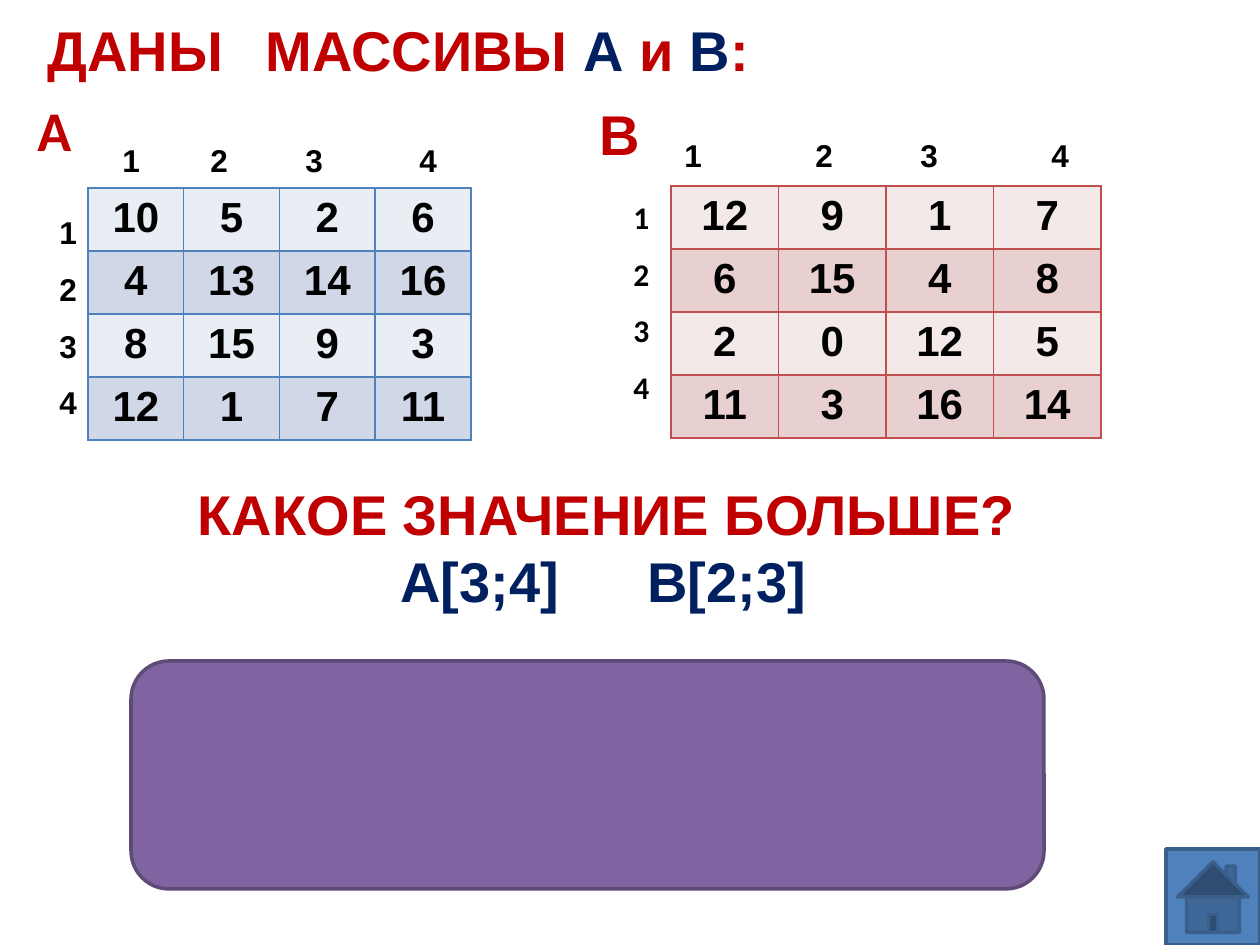
"""Build the slide that compares elements of two 4 by 4 arrays."""
from typing import NamedTuple

from lxml import etree
from pptx import Presentation, util as u
from pptx.dml.color import RGBColor
from pptx.enum import shapes, text
from pptx.oxml.ns import qn

PX = 914400 / 126
BLACK = RGBColor(0, 0, 0)
RED = RGBColor(0xC0, 0, 0)
NAVY = RGBColor(0, 0x20, 0x60)
BLUE = RGBColor(0x4F, 0x81, 0xBD)
DARK_BLUE = RGBColor(0x3A, 0x5F, 0x8C)
BLUE_BANDS = (RGBColor(0xE9, 0xED, 0xF4), RGBColor(0xD0, 0xD8, 0xE8))
BRICK = RGBColor(0xC0, 0x50, 0x4D)
BRICK_BANDS = (RGBColor(0xF4, 0xE9, 0xE9), RGBColor(0xE8, 0xD0, 0xD0))
PURPLE = RGBColor(0x80, 0x64, 0xA2)
DARK_PURPLE = RGBColor(0x5F, 0x4A, 0x78)
CENTER = text.PP_ALIGN.CENTER
LEFT = text.PP_ALIGN.LEFT


class Box(NamedTuple):
    x: int
    y: int
    w: int
    h: int


class Span(NamedTuple):
    text: str
    color: RGBColor = BLACK


class Line(NamedTuple):
    spans: tuple
    align: text.PP_ALIGN = LEFT
    tabs: tuple = ()


class Label(NamedTuple):
    box: Box
    lines: tuple
    size: int = 32
    font: str = "Arial"
    spacing: float = 1.0
    margin_right: int = 12


class Matrix(NamedTuple):
    box: Box
    rows: tuple
    border: RGBColor
    bands: tuple


class Button(NamedTuple):
    kind: shapes.MSO_SHAPE
    box: Box
    fill: RGBColor
    line: RGBColor


MATRICES = (
    Matrix(Box(88, 188, 383, 252),
           ((10, 5, 2, 6), (4, 13, 14, 16), (8, 15, 9, 3), (12, 1, 7, 11)), BLUE, BLUE_BANDS),
    Matrix(Box(671, 186, 430, 252),
           ((12, 9, 1, 7), (6, 15, 4, 8), (2, 0, 12, 5), (11, 3, 16, 14)), BRICK, BRICK_BANDS),
)
ROW_NUMBERS = tuple(Line((Span(n),)) for n in "1234")
LABELS = (
    Label(Box(35, 9, 824, 81),
          (Line((Span("ДАНЫ\tМАССИВЫ ", RED), Span("А", NAVY), Span(" и ", RED),
                 Span("В", NAVY), Span(":", RED)), tabs=(218,)),)),
    Label(Box(25, 89, 69, 81), (Line((Span("А", RED),)),), font="Calibri"),
    Label(Box(621, 173, 30, 236), ROW_NUMBERS, 18, "Calibri", 1.5, 0),
    Label(Box(672, 130, 427, 50),
          (Line((Span("1\t2\t3\t4"),), tabs=(131, 236, 367)),), 18),
    Label(Box(84, 135, 387, 50),
          (Line((Span("\t1\t2\t3\t4"),), tabs=(26, 114, 209, 323)),), 18),
    Label(Box(47, 188, 30, 234), ROW_NUMBERS, 18, spacing=1.5, margin_right=0),
    Label(Box(587, 93, 48, 81), (Line((Span("В", RED),)),), margin_right=0),
    Label(Box(66, 473, 1081, 149),
          (Line((Span("КАКОЕ ЗНАЧЕНИЕ БОЛЬШЕ?", RED),), CENTER),
           Line((Span("\tА[3;4]\tB[2;3]", NAVY),), tabs=(322, 569)))),
)
BUTTONS = (
    Button(shapes.MSO_SHAPE.ROUNDED_RECTANGLE, Box(131, 661, 913, 228), PURPLE, DARK_PURPLE),
    Button(shapes.MSO_SHAPE.ACTION_BUTTON_HOME, Box(1166, 849, 94, 96), BLUE, DARK_BLUE),
)


def px(value: float) -> u.Emu:
    """Turn pixels into EMU."""
    return u.Emu(round(value * PX))


def place(box: Box) -> tuple:
    """Return the box in EMU."""
    return tuple(px(v) for v in box)


def style(r, size: int, font: str, color: RGBColor) -> None:
    """Format one bold run."""
    r.font.size, r.font.name, r.font.bold = u.Pt(size), font, True
    r.font.color.rgb = color


def add_tabs(p, stops: tuple) -> None:
    """Add left tab stops to a paragraph."""
    tabs = etree.SubElement(p._p.get_or_add_pPr(), qn("a:tabLst"))
    for stop in stops:
        etree.SubElement(tabs, qn("a:tab"), pos=str(px(stop)), algn="l")


def add_label(s, label: Label) -> None:
    """Draw a text box."""
    tf = s.shapes.add_textbox(*place(label.box)).text_frame
    tf.word_wrap = True
    tf.margin_right = px(label.margin_right)
    for i, line in enumerate(label.lines):
        p = tf.add_paragraph() if i else tf.paragraphs[0]
        if line.tabs:
            add_tabs(p, line.tabs)
        p.alignment, p.line_spacing = line.align, label.spacing
        for span in line.spans:
            r = p.add_run()
            r.text = span.text
            style(r, label.size, label.font, span.color)


def add_borders(cell, color: RGBColor) -> None:
    """Give a cell thin lines on all sides."""
    props = cell._tc.get_or_add_tcPr()
    for side in ("lnL", "lnR", "lnT", "lnB"):
        ln = etree.SubElement(props, qn(f"a:{side}"), w=str(u.Pt(1)))
        fill = etree.SubElement(ln, qn("a:solidFill"))
        etree.SubElement(fill, qn("a:srgbClr"), val=str(color))


def add_matrix(s, matrix: Matrix) -> None:
    """Draw an array as a banded table."""
    count = len(matrix.rows)
    table = s.shapes.add_table(count, count, *place(matrix.box)).table
    table.first_row = table.horz_banding = False
    for i, values in enumerate(matrix.rows):
        table.rows[i].height = px(matrix.box.h / count)
        table.columns[i].width = px(matrix.box.w / count)
        for j, value in enumerate(values):
            cell = table.cell(i, j)
            add_borders(cell, matrix.border)
            cell.fill.solid()
            cell.fill.fore_color.rgb = matrix.bands[i % 2]
            cell.text_frame.text = str(value)
            p = cell.text_frame.paragraphs[0]
            p.alignment = CENTER
            style(p.runs[0], 24, "Arial", BLACK)


def add_button(s, button: Button) -> None:
    """Draw a filled preset shape."""
    sp = s.shapes.add_shape(button.kind, *place(button.box))
    sp.shadow.inherit = False
    sp.fill.solid()
    sp.fill.fore_color.rgb = button.fill
    sp.line.color.rgb = button.line
    sp.line.width = u.Pt(2)


def main() -> None:
    """Build and save the slide."""
    prs = Presentation()
    prs.slide_width, prs.slide_height = u.Inches(10), u.Inches(7.5)
    s = prs.slides.add_slide(prs.slide_layouts[6])
    for draw, items in ((add_matrix, MATRICES), (add_label, LABELS), (add_button, BUTTONS)):
        for item in items:
            draw(s, item)
    prs.save("out.pptx")


if __name__ == "__main__":
    main()
